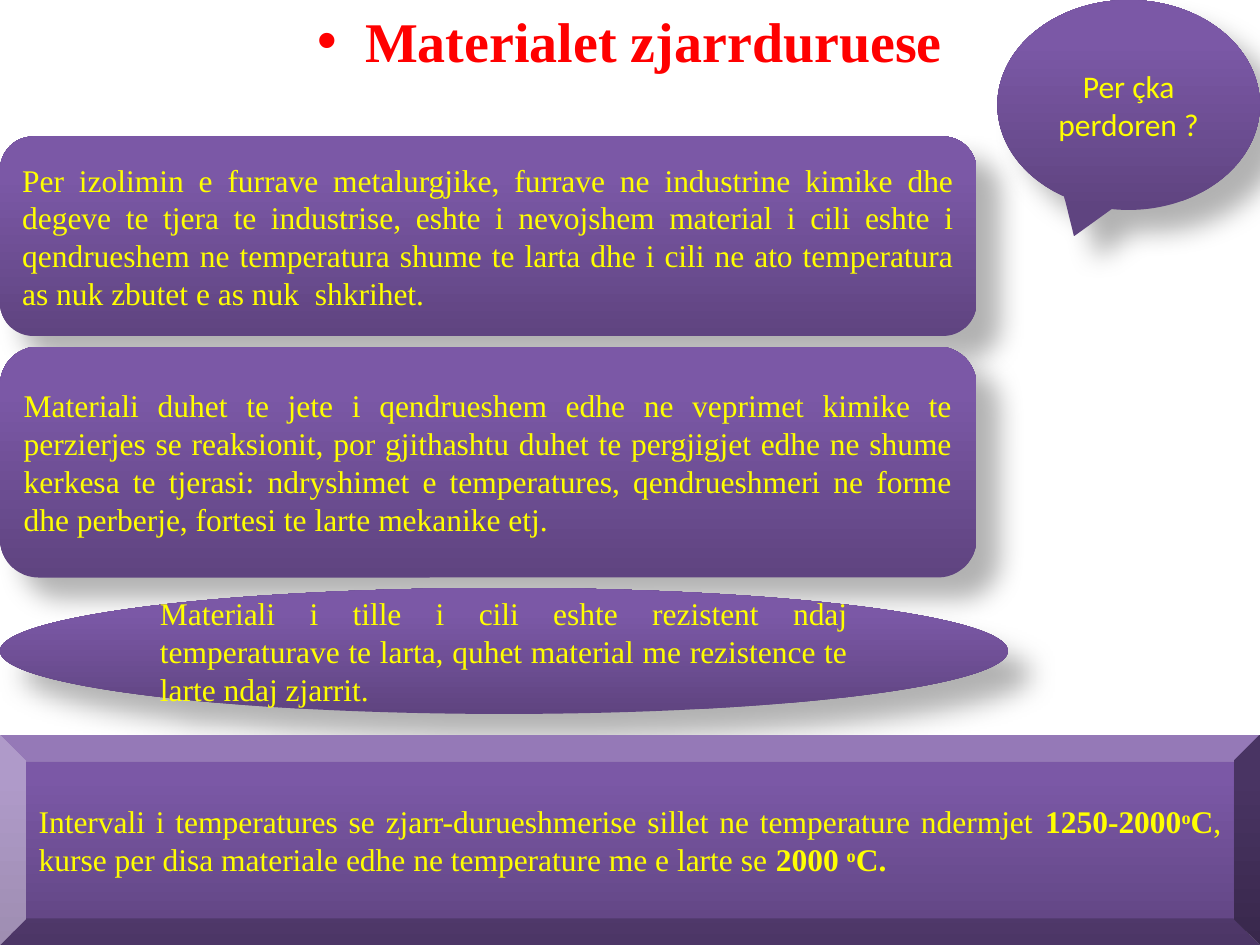
from dataclasses import dataclass

from lxml import etree
from pptx import Presentation
from pptx import util as u
from pptx.dml.color import RGBColor
from pptx.enum import shapes, text
from pptx.oxml import ns, parse_xml

COLUMNS, ROWS = 120, 90  # grid of twelfths of an inch
CELL = u.Inches(1) // 12


@dataclass(frozen=True)
class Theme:
    serif: str = "Times New Roman"
    sans: str = "Calibri"
    title_size: int = 32
    body_size: int = 18
    title_color: str = "FF0000"
    body_color: str = "FFFF00"
    shadow_color: str = "000000"
    gradient: tuple = ((0, "5F4480"), (80, "7B58A6"), (100, "7C57A8"))


THEME = Theme()
SHAPE = shapes.MSO_SHAPE
ALIGN = text.PP_ALIGN


def grid(*cells):
    """Turn left, top, width, height in grid cells into lengths."""
    return [u.Emu(cell * CELL) for cell in cells]


def add_span(para, words, size, color, font, bold=False, raised=False):
    span = para.add_run()
    span.text = words
    span.font.size = u.Pt(size)
    span.font.name = font
    span.font.bold = bold
    span.font.color.rgb = RGBColor.from_string(color)
    if raised:
        span.font._element.set("baseline", "30000")


def fill_gradient(shape):
    stops = "".join(
        f'<a:gs pos="{share * 1000}"><a:srgbClr val="{color}"/></a:gs>'
        for share, color in THEME.gradient)
    gradient = parse_xml(
        f'<a:gradFill {ns.nsdecls("a")} rotWithShape="1"><a:gsLst>{stops}</a:gsLst>'
        '<a:lin ang="16200000" scaled="0"/></a:gradFill>')
    shape._element.spPr.find(ns.qn("a:prstGeom")).addnext(gradient)


def cast_shadow(shape):
    effects = shape._element.spPr.find(ns.qn("a:effectLst"))
    shadow = etree.SubElement(
        effects, ns.qn("a:outerShdw"), blurRad=str(u.Pt(15)), dist=str(u.Pt(18)),
        dir=str(45 * 60000), algn="tl", rotWithShape="0")
    color = etree.SubElement(shadow, ns.qn("a:srgbClr"), val=THEME.shadow_color)
    etree.SubElement(color, ns.qn("a:alpha"), val="30000")


def add_panel(page, kind, cells, spans, align=ALIGN.JUSTIFY, font=THEME.serif,
              shadow=True):
    """Add a purple shape; each span is (words, bold, raised)."""
    panel = page.shapes.add_shape(kind, *grid(*cells))
    panel.shadow.inherit = False
    panel.line.fill.background()
    fill_gradient(panel)
    if shadow:
        cast_shadow(panel)
    frame = panel.text_frame
    frame.word_wrap = True
    frame.vertical_anchor = text.MSO_ANCHOR.MIDDLE
    para = frame.paragraphs[0]
    para.alignment = align
    for words, *style in spans:
        add_span(para, words, THEME.body_size, THEME.body_color, font, *style)


def add_title(page, words):
    box = page.shapes.add_textbox(*grid(0, 0, COLUMNS, ROWS))
    box.text_frame.word_wrap = True
    para = box.text_frame.paragraphs[0]
    para.alignment = ALIGN.CENTER
    add_span(para, words, THEME.title_size, THEME.title_color, THEME.serif, True)
    # Hanging bullet
    props = para._p.get_or_add_pPr()
    props.set("marL", str(u.Inches(0.38)))
    props.set("indent", str(-u.Inches(0.38)))
    before = etree.SubElement(props, ns.qn("a:spcBef"))
    etree.SubElement(before, ns.qn("a:spcPct"), val="20000")
    etree.SubElement(props, ns.qn("a:buFont"), typeface="Arial")
    etree.SubElement(props, ns.qn("a:buChar"), char="•")


def main():
    deck = Presentation()
    deck.slide_width, deck.slide_height = grid(COLUMNS, ROWS)
    page = deck.slides.add_slide(deck.slide_layouts[6])

    add_title(page, "Materialet zjarrduruese")

    # Uses, and the question they answer
    add_panel(page, SHAPE.ROUNDED_RECTANGLE, (0, 13, 93, 19), [(
        "Per izolimin e furrave metalurgjike, furrave ne industrine kimike dhe "
        "degeve te tjera te industrise, eshte i nevojshem material i cili eshte i "
        "qendrueshem ne temperatura shume te larta dhe i cili ne ato temperatura "
        "as nuk zbutet e as nuk  shkrihet.",)])
    add_panel(page, SHAPE.OVAL_CALLOUT, (95, 0, 25, 20), [("Per çka perdoren ?",)],
              ALIGN.CENTER, THEME.sans)

    # Requirements
    add_panel(page, SHAPE.ROUNDED_RECTANGLE, (0, 33, 93, 22), [(
        "Materiali duhet te jete i qendrueshem edhe ne veprimet kimike te "
        "perzierjes se reaksionit, por gjithashtu duhet te pergjigjet edhe ne "
        "shume kerkesa te tjerasi: ndryshimet e temperatures, qendrueshmeri ne "
        "forme dhe perberje, fortesi te larte mekanike etj.",)])

    # Definition
    add_panel(page, SHAPE.OVAL, (0, 56, 96, 12), [(
        "Materiali i tille i cili eshte rezistent ndaj temperaturave te larta, "
        "quhet material me rezistence te larte ndaj zjarrit.",)])

    # Temperature range
    add_panel(page, SHAPE.BEVEL, (0, 70, COLUMNS, 20), [
        ("Intervali i temperatures se zjarr-durueshmerise sillet ne temperature "
         "ndermjet ",),
        ("1250-2000", True), ("o", True, True), ("C", True),
        (", kurse per disa materiale edhe ne temperature me e larte se ",),
        ("2000 ", True), ("o", True, True), ("C.", True)], shadow=False)

    deck.save("out.pptx")


if __name__ == "__main__":
    main()
